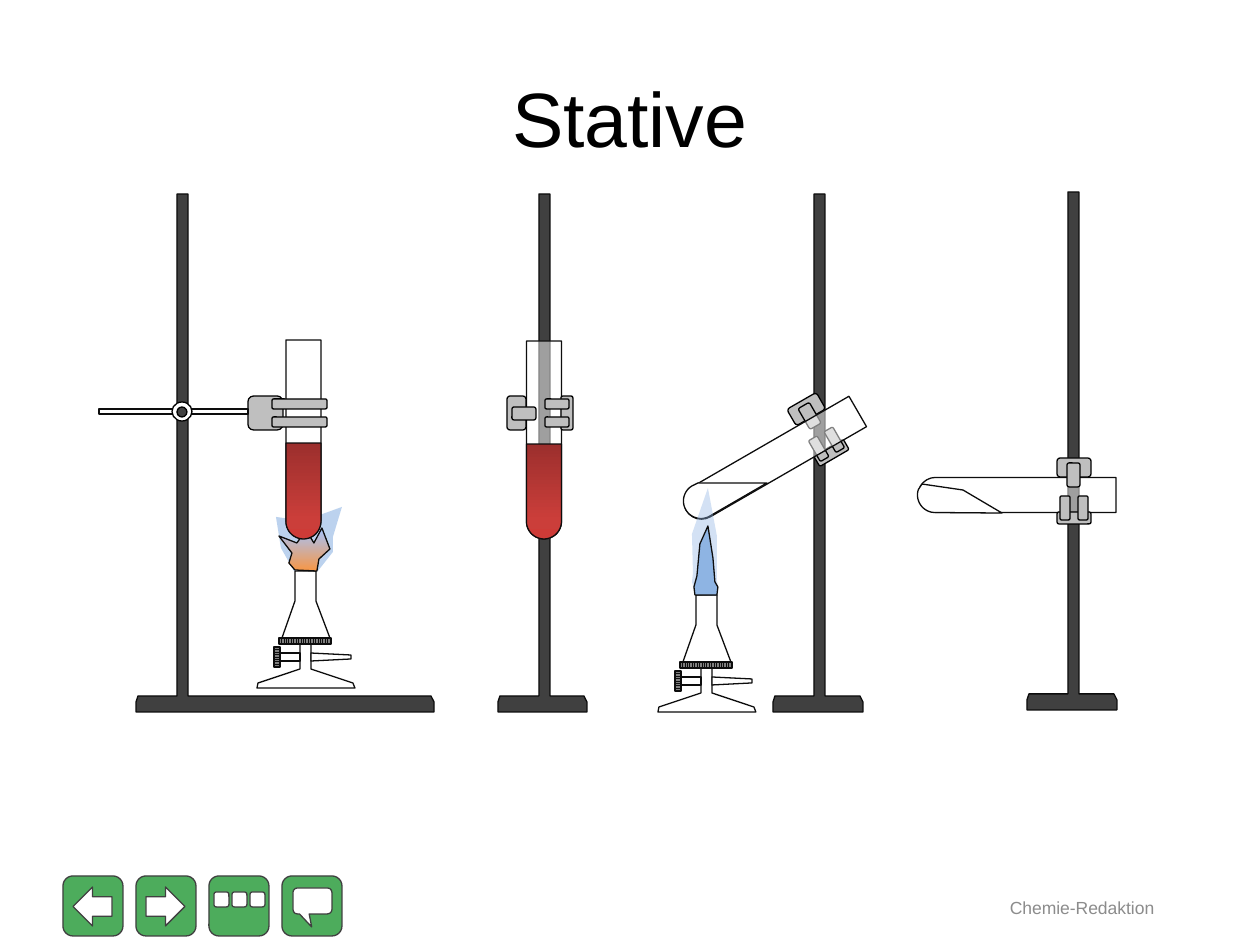
import math

from lxml import etree
from copy import deepcopy
from pptx import Presentation
from pptx import util as u
from pptx.dml.color import RGBColor
from pptx.enum import dml, shapes, text
from pptx.oxml.ns import qn

PX = 914400 / 126
S = shapes.MSO_SHAPE
TUBE_W, TUBE_H = 35, 198
COLORS = {
    "white": "FFFFFF", "black": "000000", "ink": "0D0D0D", "iron": "404040",
    "steel": "BFBFBF", "gray": "808080", "footer": "8C8C8C", "green": "4DAC5C",
    "flame": "8EB4E3", "orange": "F79646", "haze": "A4C4FF",
    "red_dark": "9C2F2D", "red": "CB3E3A", "red_light": "CE3B37",
}
RED_LIQUID = [(0, "red_dark"), (0.8, "red"), (1, "red_light")]
FIRE = [(0, "orange"), (1, "haze")]
CLAMP_PARTS = [
    (17, -17, 12, 34), (-37, -17, 19, 34), (-32, -6, 24, 13),
    (1, -14, 24, 10), (1, 4, 24, 10),
]


def px(n):
    return u.Emu(round(n * PX))


def rgb(name):
    return RGBColor.from_string(COLORS[name])


def arc(cx, cy, r, start, end, step=6):
    return [(cx + r * math.cos(math.radians(a)), cy + r * math.sin(math.radians(a)))
            for a in range(start, end + 1, step)]


class LabSlide:
    font = "Arial"
    line_width = u.Pt(0.75)

    def __init__(self, prs):
        self.s = prs.slides.add_slide(prs.slide_layouts[6])
        self.target = self.s.shapes

    def group(self):
        self.target = self.s.shapes.add_group_shape().shapes

    def paint(self, sp, fill, line, alpha=None):
        sp.shadow.inherit = False
        if fill is None:
            sp.fill.background()
        else:
            sp.fill.solid()
            sp.fill.fore_color.rgb = rgb(fill)
        if alpha is not None:
            color = sp._element.spPr.find(".//" + qn("a:srgbClr"))
            etree.SubElement(color, qn("a:alpha")).set("val", str(alpha * 1000))
        if line is None:
            sp.line.fill.background()
        else:
            sp.line.color.rgb = rgb(line)
            sp.line.width = self.line_width
        return sp

    def shape(self, kind, x, y, w, h, fill="white", line="ink", rot=0, adj=(), alpha=None):
        sp = self.target.add_shape(kind, px(x), px(y), px(w), px(h))
        sp.rotation = rot
        for i, value in enumerate(adj):
            sp.adjustments[i] = value
        return self.paint(sp, fill, line, alpha)

    def outline(self, points, fill="white", line="ink", alpha=None):
        pts = [(px(x), px(y)) for x, y in points]
        builder = self.target.build_freeform(*pts[0], scale=1.0)
        builder.add_line_segments(pts[1:], close=True)
        return self.paint(builder.convert_to_shape(), fill, line, alpha)

    def gradient(self, sp, stops, angle):
        sp.fill.gradient()
        sp.fill.gradient_angle = angle
        gs_list = sp._element.spPr.find(".//" + qn("a:gsLst"))
        while len(gs_list) < len(stops):
            gs_list.append(deepcopy(gs_list[0]))
        for stop, (position, color) in zip(sp.fill.gradient_stops, stops):
            stop.position = position
            stop.color.rgb = rgb(color)

    def knurl(self, x, y, w, h, pattern, rot=0):
        sp = self.shape(S.RECTANGLE, x, y, w, h, rot=rot)
        sp.fill.patterned()
        sp.fill.pattern = pattern
        sp.fill.fore_color.rgb = rgb("ink")
        sp.fill.back_color.rgb = rgb("gray")

    def label(self, x, y, w, h, content, size, color):
        tf = self.s.shapes.add_textbox(px(x), px(y), px(w), px(h)).text_frame
        tf.word_wrap = True
        tf.vertical_anchor = text.MSO_ANCHOR.MIDDLE
        p = tf.paragraphs[0]
        p.text = content
        p.alignment = text.PP_ALIGN.CENTER
        p.font.name = self.font
        p.font.size = u.Pt(size)
        p.font.color.rgb = rgb(color)

    def button(self, x, y):
        self.shape(S.ROUNDED_RECTANGLE, x, y, 60, 60, "green", "iron")

    def stand(self, pole, top, left, right):
        shoulder, rim, bottom = top + 502, top + 508, top + 518
        self.outline([
            (pole, top), (pole + 11, top), (pole + 11, shoulder), (right - 3, shoulder),
            (right, rim), (right, bottom), (left, bottom), (left, rim),
            (left + 2, shoulder), (pole, shoulder),
        ], "iron")

    def tube(self, cx, cy, rot=0, fill="white", alpha=50):
        sp = self.shape(S.ROUND_2_SAME_RECTANGLE, cx - TUBE_W / 2, cy - TUBE_H / 2,
                        TUBE_W, TUBE_H, fill, rot=rot, adj=(0.5, 0), alpha=alpha)
        sp._element.spPr.find(qn("a:xfrm")).set("flipV", "1")

    def red_liquid(self, cx, top, bottom):
        r = TUBE_W / 2
        sp = self.outline([(cx - r, top), (cx + r, top)] + arc(cx, bottom - r, r, 0, 180))
        self.gradient(sp, RED_LIQUID, 270)

    def steel(self, x, y, w, h, rot=0):
        self.shape(S.ROUNDED_RECTANGLE, x, y, w, h, "steel", "black", rot)

    def clamp(self, cx, cy, rot=0):
        cos, sin = math.cos(math.radians(rot)), math.sin(math.radians(rot))
        for x, y, w, h in CLAMP_PARTS:
            mx, my = x + w / 2, y + h / 2
            self.steel(cx + mx * cos - my * sin - w / 2,
                       cy + mx * sin + my * cos - h / 2, w, h, rot)

    def burner(self, x, y):
        body = [(38, 0), (59, 0), (59, 30), (73, 67), (54, 67), (54, 98), (96, 112),
                (98, 117), (0, 117), (1, 112), (43, 98), (43, 67), (25, 67), (38, 30)]
        self.outline([(x + dx, y + dy) for dx, dy in body])
        self.knurl(x + 22, y + 67, 52, 6, dml.MSO_PATTERN.LIGHT_VERTICAL)
        self.shape(S.RECTANGLE, x + 22, y + 82, 21, 8)
        self.knurl(x + 10, y + 83, 20, 6, dml.MSO_PATTERN.LIGHT_HORIZONTAL, 270)
        self.shape(S.TRAPEZOID, x + 70, y + 66, 8, 40, rot=90, adj=(0.25,))


def navigation(lab):
    back, forward, overview, comment = (63 + 73 * i for i in range(4))
    for x in (back, forward, overview, comment):
        lab.button(x, 876)
    for x, rot in ((back, 180), (forward, 0)):
        lab.shape(S.RIGHT_ARROW, x + 10, 887, 39, 39, line="iron", rot=rot)
    for i in range(3):
        lab.shape(S.ROUNDED_RECTANGLE, overview + 5 + 18 * i, 892, 15, 15, line="iron")
    lab.shape(S.ROUNDED_RECTANGULAR_CALLOUT, comment + 11, 888, 39, 26,
              line="iron", adj=(-0.02, 1, 0.17))


def front_stand(lab):
    lab.group()
    lab.stand(539, 194, 498, 587)
    lab.tube(544, 440)
    lab.red_liquid(544, 444, 539)
    lab.clamp(544, 413)


def heating_stand(lab):
    lab.group()
    lab.stand(177, 194, 136, 434)
    lab.burner(257, 571)
    lab.outline([(294, 571), (281, 548), (276, 517), (290, 519), (297, 534), (320, 515),
                 (342, 507), (333, 537), (333, 552), (318, 571)], "flame", None, 59)
    fire = lab.outline([(295, 570), (289, 563), (292, 553), (279, 536), (297, 543), (306, 530),
                        (314, 543), (322, 528), (330, 549), (319, 559), (317, 571)])
    lab.gradient(fire, FIRE, 90)
    lab.tube(303.5, 439, fill=None, alpha=None)
    lab.red_liquid(303.5, 443, 539)
    lab.steel(248, 396, 35, 34)
    for y in (399, 417):
        lab.steel(272, y, 55, 10)
    lab.shape(S.RECTANGLE, 99, 409, 149, 5)
    lab.shape(S.OVAL, 172, 402, 20, 19, line="black")
    lab.shape(S.OVAL, 177, 407, 10, 10, "iron", "black")


def level_stand(lab):
    lab.group()
    lab.stand(1068, 192, 1027, 1117)
    lab.tube(1017, 495, 90)
    lab.clamp(1074, 495, 90)
    lab.outline([(922, 484), (963, 490), (1002, 513)] + arc(935, 495, 17.5, 90, 198))


def tilted_stand(lab):
    lab.group()
    lab.stand(814, 194, 773, 863)
    lab.clamp(820, 433, 60)
    lab.tube(772, 461, 60)
    lab.outline([(698, 483), (767, 483)] + arc(701, 501, 17.5, 60, 240))
    lab.burner(658, 595)
    lab.outline([(696, 595), (692, 582), (693, 573), (692, 534), (708, 488), (717, 536),
                 (717, 580), (718, 587), (717, 596)], "flame", None, 39)
    lab.outline([(695, 595), (694, 587), (697, 576), (700, 544), (708, 526), (713, 558),
                 (715, 582), (718, 587), (717, 595)], "flame")


def main():
    prs = Presentation()
    prs.slide_width, prs.slide_height = px(1260), px(945)
    lab = LabSlide(prs)
    navigation(lab)
    lab.label(994, 890, 176, 35, "Chemie-Redaktion", 10, "footer")
    lab.label(63, 38, 1134, 158, "Stative", 44, "black")
    for draw in (front_stand, heating_stand, level_stand, tilted_stand):
        draw(lab)
    prs.save("out.pptx")


if __name__ == "__main__":
    main()
